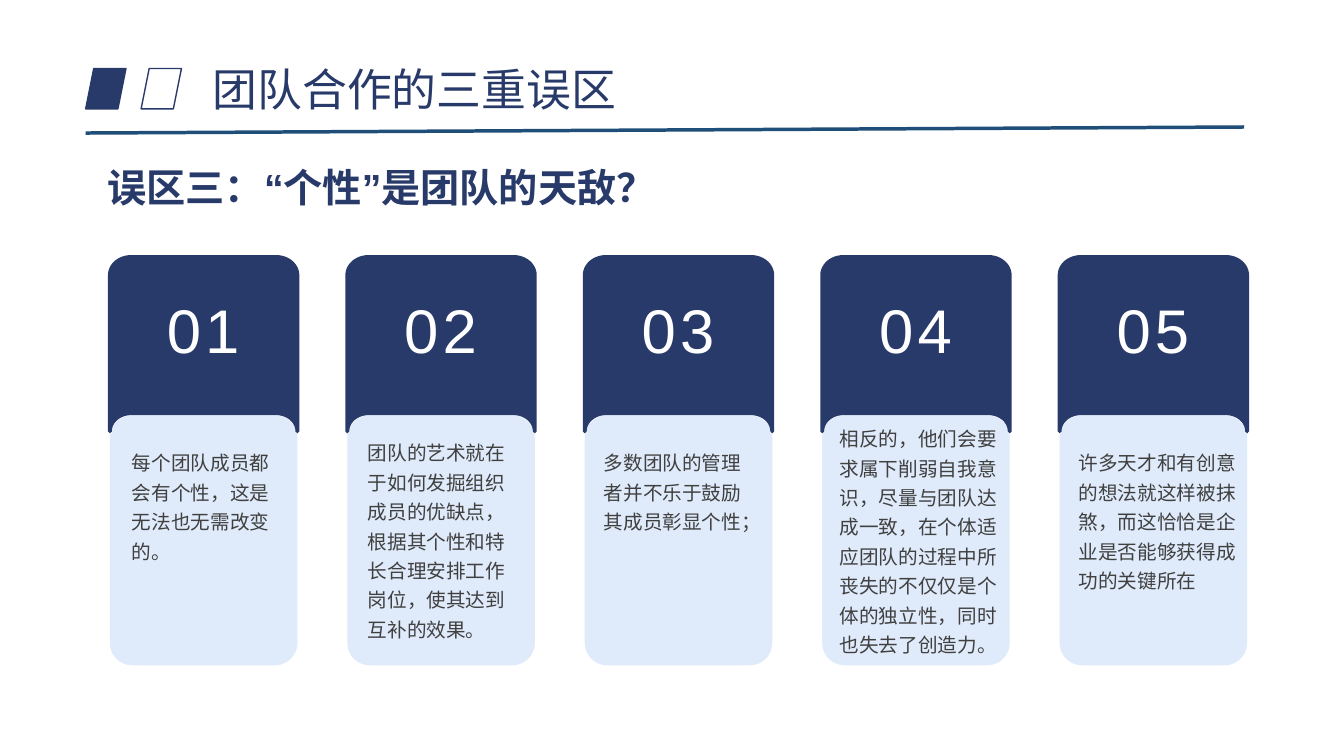
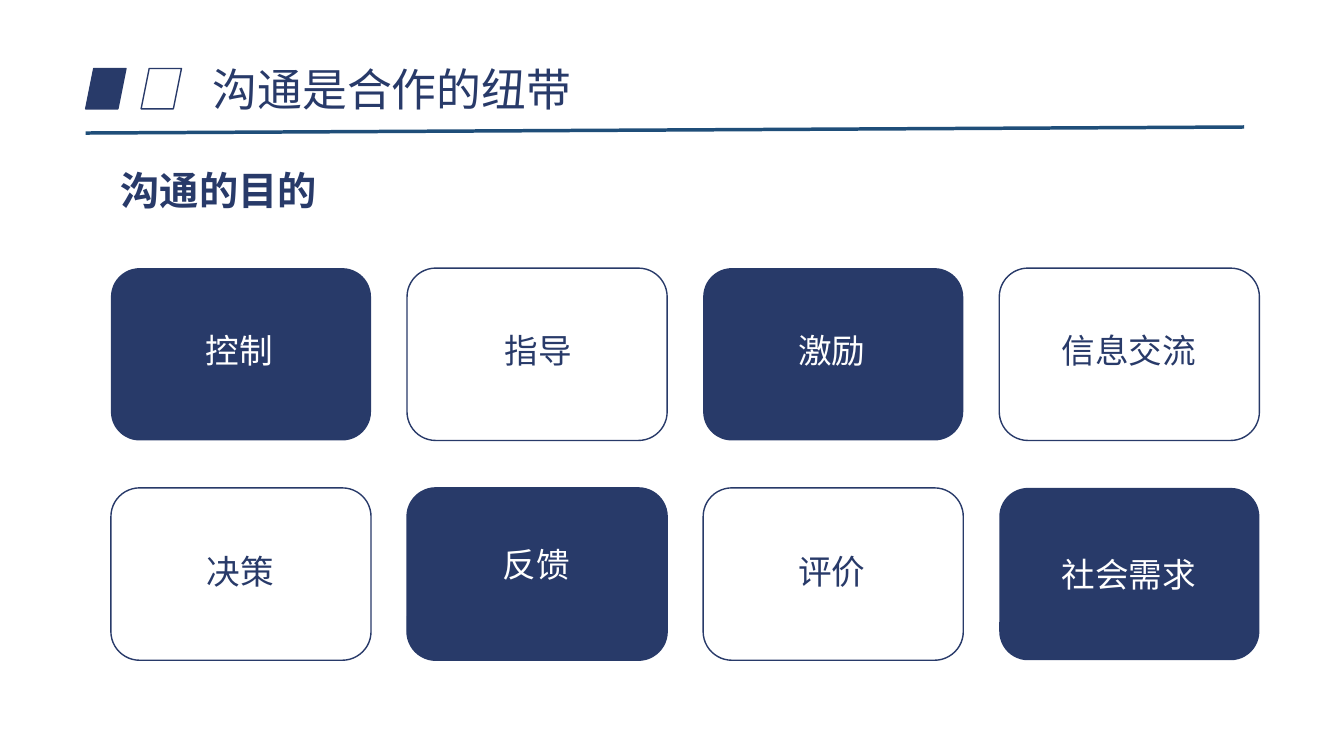
"""Builds two slides on teamwork: a five-card row and a grid of eight purposes."""
import math
from dataclasses import dataclass

import pptx
import pptx.dml.color
import pptx.enum.shapes
import pptx.enum.text
import pptx.oxml.ns
import pptx.slide
import pptx.util
from lxml import etree

Inches = pptx.util.Inches
Pt = pptx.util.Pt
SHAPE = pptx.enum.shapes.MSO_SHAPE
ALIGN = pptx.enum.text.PP_ALIGN
ANCHOR = pptx.enum.text.MSO_ANCHOR
AUTO = pptx.enum.text.MSO_AUTO_SIZE
qn = pptx.oxml.ns.qn


@dataclass(frozen=True)
class Theme:
    navy: str = "283A69"
    rule: str = "1F4E79"
    pale: str = "DFEAFA"
    body: str = "404040"
    white: str = "FFFFFF"
    font: str = "Arial"
    title_size: int = 32
    subtitle_size: int = 28
    number_size: int = 44
    body_size: int = 14
    label_size: int = 24


@dataclass(frozen=True)
class Card:
    text: str
    left: float
    top: float
    width: float
    height: float


@dataclass(frozen=True)
class Purpose:
    text: str
    left: float
    top: float
    width: float = 0.87
    filled: bool = False
    outlined: bool = True


THEME = Theme()

CARDS = [
    Card("每个团队成员都会有个性，这是无法也无需改变的。", 1.21, 4.37, 1.64, 1.28),
    Card("团队的艺术就在于如何发掘组织成员的优缺点，根据其个性和特长合理安排工作岗位，使其达到互补的效果。",
         3.55, 4.27, 1.64, 2.16),
    Card("多数团队的管理者并不乐于鼓励其成员彰显个性；", 5.89, 4.37, 1.64, 1.28),
    Card("相反的，他们会要求属下削弱自我意识，尽量与团队达成一致，在个体适应团队的过程中所丧失的不仅仅是个体的独立性，同时也失去了创造力。",
         8.23, 4.13, 1.8, 2.46),
    Card("许多天才和有创意的想法就这样被抹煞，而这恰恰是企业是否能够获得成功的关键所在",
         10.6, 4.37, 1.77, 1.57),
]

PURPOSES = [
    Purpose("控制", 1.94, 3.27, filled=True, outlined=False),
    Purpose("指导", 4.91, 3.27),
    Purpose("激励", 7.82, 3.27, filled=True, outlined=False),
    Purpose("信息交流", 10.43, 3.27, width=1.53),
    Purpose("决策", 1.95, 5.46),
    Purpose("反馈", 4.89, 5.39, filled=True),
    Purpose("评价", 7.82, 5.46),
    Purpose("社会需求", 10.43, 5.49, width=1.53, filled=True, outlined=False),
]


def rgb(color: str) -> pptx.dml.color.RGBColor:
    """Turn a hex string into a colour."""
    return pptx.dml.color.RGBColor.from_string(color)


def add_text(s: pptx.slide.Slide, text: str, left: float, top: float, width: float,
             height: float, *, size: int, color: str, bold: bool = False,
             align: ALIGN = ALIGN.LEFT, anchor: ANCHOR = ANCHOR.TOP, wrap: bool = True,
             leading: float = 1.0, tracking: float = 0, bottom: float = 0.05,
             grow: bool = True) -> None:
    """Add a text box holding one formatted paragraph."""
    box = s.shapes.add_textbox(Inches(left), Inches(top), Inches(width), Inches(height))
    tf = box.text_frame
    tf.word_wrap = wrap
    tf.auto_size = AUTO.SHAPE_TO_FIT_TEXT if grow else AUTO.NONE
    tf.vertical_anchor = anchor
    tf.margin_bottom = Inches(bottom)
    p = tf.paragraphs[0]
    p.alignment = align
    p.line_spacing = leading
    r = p.add_run()
    r.text = text
    r.font.size = Pt(size)
    r.font.bold = bold
    r.font.color.rgb = rgb(color)
    r.font.name = THEME.font
    rpr = r.font._element
    etree.SubElement(rpr, qn("a:ea")).set("typeface", THEME.font)
    if tracking:
        rpr.set("spc", str(round(tracking * 100)))


def paint(sp, fill: str | None = None, line: str | None = None, weight: float = 1) -> None:
    """Set a shape's fill and outline and drop its shadow."""
    sp.shadow.inherit = False
    if fill:
        sp.fill.solid()
        sp.fill.fore_color.rgb = rgb(fill)
    else:
        sp.fill.background()
    if line:
        sp.line.color.rgb = rgb(line)
        sp.line.width = Pt(weight)
    else:
        sp.line.fill.background()


def add_box(s: pptx.slide.Slide, kind: SHAPE, left: float, top: float, width: float,
            height: float, *, fill: str | None = None, line: str | None = None):
    """Add a painted preset shape."""
    sp = s.shapes.add_shape(kind, Inches(left), Inches(top), Inches(width), Inches(height))
    paint(sp, fill, line)
    return sp


def arc(cx: float, cy: float, rx: float, ry: float, start: int,
        end: int) -> list[tuple[float, float]]:
    """Return points along a quarter ellipse, angles in degrees."""
    steps = 12
    angles = [math.radians(start + (end - start) * i / steps) for i in range(steps + 1)]
    return [(cx + rx * math.cos(a), cy + ry * math.sin(a)) for a in angles]


def add_card_cap(s: pptx.slide.Slide, left: float, top: float, width: float,
                 height: float) -> None:
    """Add a cap with rounded top corners and a bottom edge that hugs the panel."""
    rx, ry = 0.21, 0.18
    right, bottom = left + width, top + height
    outline = (arc(left + rx, top + ry, rx, ry, 180, 270)
               + arc(right - rx, top + ry, rx, ry, 270, 360)
               + arc(right - rx, bottom, rx, ry, 360, 270)
               + arc(left + rx, bottom, rx, ry, 270, 180))
    points = [(Inches(x), Inches(y)) for x, y in outline]
    builder = s.shapes.build_freeform(*points[0])
    builder.add_line_segments(points[1:], close=True)
    paint(builder.convert_to_shape(), THEME.navy, THEME.navy, 2.75)


def add_header(s: pptx.slide.Slide, title: str) -> None:
    """Add the title, the rule under it and the two slanted marks."""
    add_text(s, title, 2.01, 0.56, 4.85, 0.64, size=THEME.title_size, color=THEME.navy)
    rule = s.shapes.add_connector(pptx.enum.shapes.MSO_CONNECTOR.STRAIGHT,
                                  Inches(0.85), Inches(1.32), Inches(12.34), Inches(1.26))
    rule.line.color.rgb = rgb(THEME.rule)
    rule.line.width = Pt(2.5)
    etree.SubElement(rule._element.spPr, qn("a:effectLst"))
    for left, fill in ((0.85, THEME.navy), (1.4, None)):
        add_box(s, SHAPE.FLOWCHART_DATA, left, 0.68, 0.4, 0.4, fill=fill, line=THEME.navy)


def add_subtitle(s: pptx.slide.Slide, text: str, left: float, top: float,
                 width: float) -> None:
    """Add the bold line below the header."""
    add_text(s, text, left, top, width, 0.57, size=THEME.subtitle_size, color=THEME.navy,
             bold=True, anchor=ANCHOR.MIDDLE)


def build_myth(s: pptx.slide.Slide) -> None:
    """Fill the slide with five numbered cards."""
    add_header(s, "团队合作的三重误区")
    add_subtitle(s, " 误区三：“个性”是团队的天敌？", 0.86, 1.57, 8.7)
    first, pitch, width = 1.09, 2.355, 1.86
    for i, card in enumerate(CARDS):
        left = first + i * pitch
        panel = add_box(s, SHAPE.ROUNDED_RECTANGLE, left, 4.12, width, 2.48, fill=THEME.pale)
        panel.adjustments[0] = 0.12
        add_card_cap(s, left, 2.55, width, 1.73)
        add_text(s, f"{i + 1:02d}", left + 0.32, 2.85, 1.21, 0.95, size=THEME.number_size,
                 color=THEME.white, align=ALIGN.CENTER, tracking=3, bottom=0, grow=False)
        add_text(s, card.text, card.left, card.top, card.width, card.height,
                 size=THEME.body_size, color=THEME.body, leading=1.25)


def build_purposes(s: pptx.slide.Slide) -> None:
    """Fill the slide with a four by two grid of purposes."""
    add_header(s, "沟通是合作的纽带")
    add_subtitle(s, "沟通的目的", 1.1, 1.6, 2.68)
    for i, item in enumerate(PURPOSES):
        row, col = divmod(i, 4)
        add_box(s, SHAPE.ROUNDED_RECTANGLE, 1.1 + col * 2.937, 2.66 + row * 2.18, 2.58, 1.71,
                fill=THEME.navy if item.filled else None,
                line=THEME.navy if item.outlined else None)
        add_text(s, item.text, item.left, item.top, item.width, 0.46, size=THEME.label_size,
                 color=THEME.white if item.filled else THEME.navy, wrap=False, leading=0.9)


def main() -> None:
    """Build and save the presentation."""
    prs = pptx.Presentation()
    prs.slide_width, prs.slide_height = Inches(13.33), Inches(7.5)
    for build in (build_myth, build_purposes):
        build(prs.slides.add_slide(prs.slide_layouts[6]))
    prs.save("out.pptx")


if __name__ == "__main__":
    main()
